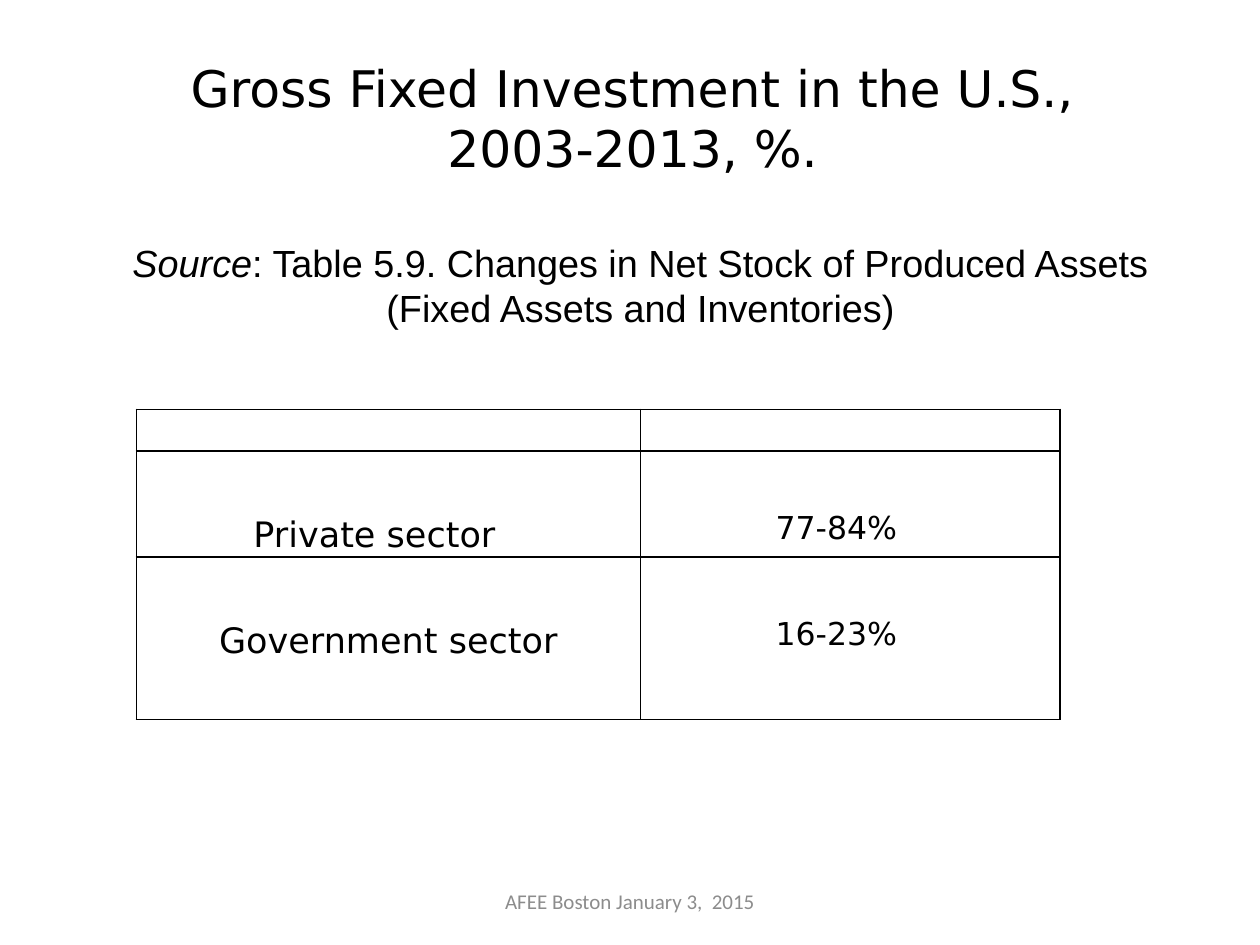
from dataclasses import dataclass

from lxml import etree
from pptx import Presentation
from pptx.dml.color import RGBColor
from pptx.enum.text import MSO_ANCHOR, PP_ALIGN
from pptx.oxml.ns import qn
from pptx.util import Cm, Pt

CENTER = PP_ALIGN.CENTER
MIDDLE = MSO_ANCHOR.MIDDLE
TOP = MSO_ANCHOR.TOP


@dataclass(frozen=True)
class Theme:
    ink: str = "000000"
    muted: str = "8C8C8C"
    heading_font: str = "DejaVu Sans"
    source_font: str = "Arial"
    footer_font: str = "Calibri"
    title_size: float = 28.8
    source_size: float = 21.6
    sector_size: float = 20
    share_size: float = 18
    footer_size: float = 12
    border_width: float = 1


@dataclass(frozen=True)
class Sector:
    name: str
    share: str
    height: float  # cm
    name_shift: float  # extra right inset in cm


THEME = Theme()
SECTORS = [
    Sector("Private sector", "77-84%", 2.12, 0.56),
    Sector("Government sector", "16-23%", 3.28, 0),
]
HEADER_HEIGHT = 0.84
COLUMN_WIDTHS = (10.16, 8.46)
SIDE_INSET = 0.15
SHARE_SHIFT = 0.56


def write(paragraph, text, *, size, font=THEME.heading_font, color=THEME.ink, italic=False):
    """Add one formatted run to a centred paragraph."""
    paragraph.alignment = CENTER
    run = paragraph.add_run()
    run.text = text
    run.font.size = Pt(size)
    run.font.name = font
    run.font.italic = italic
    run.font.color.rgb = RGBColor.from_string(color)


def add_text_frame(slide, left: float, top: float, width: float, height: float, inset: float):
    frame = slide.shapes.add_textbox(Cm(left), Cm(top), Cm(width), Cm(height)).text_frame
    frame.word_wrap = True
    frame.vertical_anchor = MIDDLE
    frame.margin_left = frame.margin_right = Cm(inset)
    return frame


def prepare_cell(cell, theme: Theme) -> None:
    """Clear the cell's insets and fill, and rule all four sides."""
    cell.margin_left = cell.margin_right = cell.margin_top = cell.margin_bottom = 0
    properties = cell._tc.get_or_add_tcPr()
    for side in ("a:lnL", "a:lnR", "a:lnT", "a:lnB"):
        line = etree.SubElement(properties, qn(side), w=str(Pt(theme.border_width)))
        solid = etree.SubElement(line, qn("a:solidFill"))
        etree.SubElement(solid, qn("a:srgbClr"), val=theme.ink)
    cell.fill.background()


def fill_cell(cell, text: str, size: float, top: float, shift: float) -> None:
    cell.vertical_anchor = TOP
    cell.margin_top = Cm(top)
    cell.margin_left = Cm(SIDE_INSET)
    cell.margin_right = Cm(SIDE_INSET + shift)
    write(cell.text_frame.paragraphs[0], text, size=size)


def add_sector_table(slide, sectors: list[Sector], theme: Theme) -> None:
    heights = [HEADER_HEIGHT] + [sector.height for sector in sectors]
    table = slide.shapes.add_table(
        len(heights), len(COLUMN_WIDTHS), Cm(2.75), Cm(8.25),
        Cm(sum(COLUMN_WIDTHS)), Cm(sum(heights)),
    ).table
    table.first_row = table.horz_banding = False
    for column, width in zip(table.columns, COLUMN_WIDTHS):
        column.width = Cm(width)
    for row, height in zip(table.rows, heights):
        row.height = Cm(height)
    for cell in table.iter_cells():
        prepare_cell(cell, theme)
    for index, sector in enumerate(sectors, start=1):
        fill_cell(table.cell(index, 0), sector.name, theme.sector_size, 1.29, sector.name_shift)
        fill_cell(table.cell(index, 1), sector.share, theme.share_size, 1.2, SHARE_SHIFT)


def main() -> None:
    deck = Presentation()
    deck.slide_width, deck.slide_height = Cm(25.4), Cm(19.05)
    slide = deck.slides.add_slide(deck.slide_layouts[6])

    # Title and source
    heading = add_text_frame(slide, 1.27, 1.9, 23.29, 4, inset=0.6)
    title = heading.paragraphs[0]
    write(title, "Gross Fixed Investment in the U.S., ", size=THEME.title_size)
    title.add_line_break()
    write(title, "2003-2013, %. ", size=THEME.title_size)
    source = heading.add_paragraph()
    source.space_before = Pt(35)
    source_format = {"size": THEME.source_size, "font": THEME.source_font}
    write(source, "Source", italic=True, **source_format)
    write(source, ": Table 5.9. Changes in Net Stock of Produced Assets "
                  "(Fixed Assets and Inventories)", **source_format)

    # Investment shares by sector
    add_sector_table(slide, SECTORS, THEME)

    # Footer
    footer = add_text_frame(slide, 8.68, 17.66, 8.04, 1.01, inset=0.25)
    write(footer.paragraphs[0], "AFEE Boston January 3,  2015",
          size=THEME.footer_size, font=THEME.footer_font, color=THEME.muted)

    deck.save("out.pptx")


if __name__ == "__main__":
    main()
